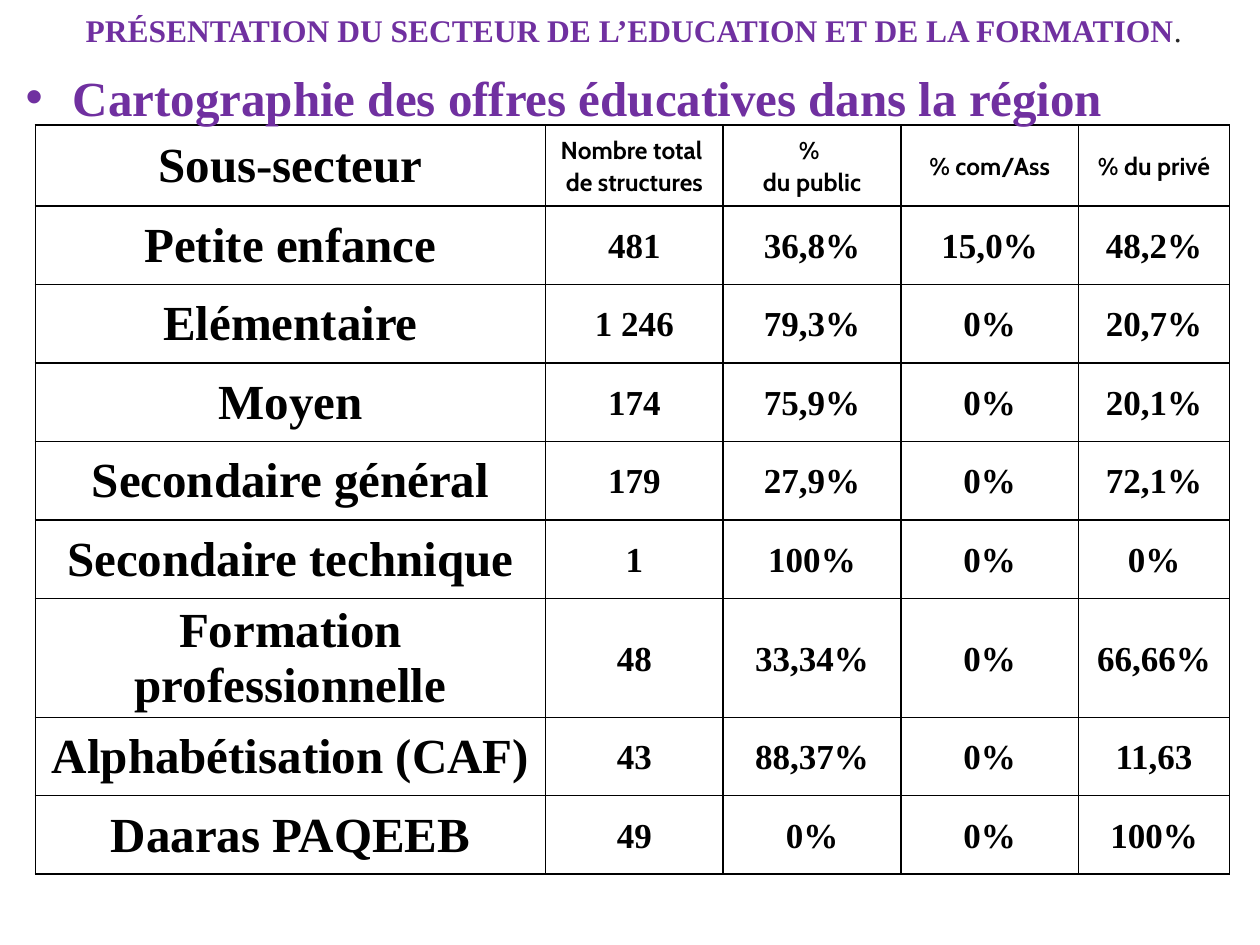
from pptx import Presentation
from pptx.dml.color import RGBColor
from pptx.enum.text import MSO_ANCHOR, PP_ALIGN
from pptx.oxml.ns import qn
from pptx.util import Pt
from lxml import etree

MIDDLE = MSO_ANCHOR.MIDDLE
CENTER = PP_ALIGN.CENTER
PURPLE = RGBColor(0x70, 0x30, 0xA0)
BLACK = RGBColor(0, 0, 0)
GREY = RGBColor(0x26, 0x26, 0x26)
WHITE = RGBColor(0xFF, 0xFF, 0xFF)
SERIF = "Times New Roman"
SANS = "Cabin"

COLS = [291.6, 101.52, 101.52, 101.52, 86.4]
ROWS = [46.4] + [44.87] * 5 + [64.5] + [44.87] * 2
DATA = [
    ["Sous-secteur", "Nombre total \nde structures", "% \ndu public", "% com/Ass", "% du privé"],
    ["Petite enfance", "481", "36,8%", "15,0%", "48,2%"],
    ["Elémentaire", "1 246", "79,3%", "0%", "20,7%"],
    ["Moyen", "174", "75,9%", "0%", "20,1%"],
    ["Secondaire général", "179", "27,9%", "0%", "72,1%"],
    ["Secondaire technique", "1", "100%", "0%", "0%"],
    ["Formation professionnelle", "48", "33,34%", "0%", "66,66%"],
    ["Alphabétisation (CAF)", "43", "88,37%", "0%", "11,63"],
    ["Daaras PAQEEB", "49", "0%", "0%", "100%"],
]


def style(run, size, color, name=SERIF, bold=True):
    font = run.font
    font.size = Pt(size)
    font.name = name
    font.bold = bold
    font.color.rgb = color


def inset(item, left, top, right, bottom):
    item.margin_left, item.margin_top = Pt(left), Pt(top)
    item.margin_right, item.margin_bottom = Pt(right), Pt(bottom)


def add_box(slide, left, top, width, height):
    box = slide.shapes.add_textbox(Pt(left), Pt(top), Pt(width), Pt(height))
    frame = box.text_frame
    frame.word_wrap = True
    frame.vertical_anchor = MIDDLE
    para = frame.paragraphs[0]
    para.alignment = CENTER
    return frame, para


def add_title(slide):
    _, para = add_box(slide, 20.16, 0, 684, 34.56)
    para.text = "PRÉSENTATION DU SECTEUR DE L’EDUCATION ET DE LA FORMATION"
    style(para.runs[0], 18, PURPLE)
    dot = para.add_run()
    dot.text = "."
    style(dot, 18, GREY, bold=False)


def add_bullet(slide):
    frame, para = add_box(slide, -14.4, 28.08, 666, 43.92)
    inset(frame, 14.4, 10.08, 7.2, 0)
    para.text = "Cartographie des offres éducatives dans la région"
    props = para._p.get_or_add_pPr()
    props.set("marL", str(Pt(27)))
    props.set("indent", str(-Pt(27)))
    etree.SubElement(props, qn("a:buFont"), typeface="Arial")
    etree.SubElement(props, qn("a:buChar"), char="•")
    style(para.runs[0], 28, PURPLE)


def add_edges(cell):
    props = cell._tc.get_or_add_tcPr()
    for spot, side in enumerate(("lnL", "lnR", "lnT", "lnB")):
        line = etree.Element(qn(f"a:{side}"), w=str(Pt(1)))
        fill = etree.SubElement(line, qn("a:solidFill"))
        etree.SubElement(fill, qn("a:srgbClr"), val=str(BLACK))
        props.insert(spot, line)


def fill_cell(cell, text, row, col):
    cell.fill.solid()
    cell.fill.fore_color.rgb = WHITE
    cell.vertical_anchor = MIDDLE
    para = cell.text_frame.paragraphs[0]
    para.text = text
    para.alignment = CENTER
    if col == 0:
        inset(cell, 0.72, 0.72, 0.72, 0)
        size, name = 28, SERIF
    else:
        inset(cell, 3.6, 0, 3.6, 0)
        para.line_spacing = 1.07
        size, name = (14, SANS) if row == 0 else (20, SERIF)
    for run in para.runs:
        style(run, size, BLACK, name)
    add_edges(cell)


def add_grid(slide):
    frame = slide.shapes.add_table(
        len(ROWS), len(COLS), Pt(20.16), Pt(71.28), Pt(sum(COLS)), Pt(sum(ROWS)))
    table = frame.table
    table.first_row = False
    table.horz_banding = False
    for col, width in zip(table.columns, COLS):
        col.width = Pt(width)
    for row, height in zip(table.rows, ROWS):
        row.height = Pt(height)
    for r, line in enumerate(DATA):
        for c, text in enumerate(line):
            fill_cell(table.cell(r, c), text, r, c)


def main():
    deck = Presentation()
    deck.slide_width, deck.slide_height = Pt(720), Pt(540)
    slide = deck.slides.add_slide(deck.slide_layouts[6])
    add_title(slide)
    add_grid(slide)
    add_bullet(slide)
    deck.save("out.pptx")


if __name__ == "__main__":
    main()
